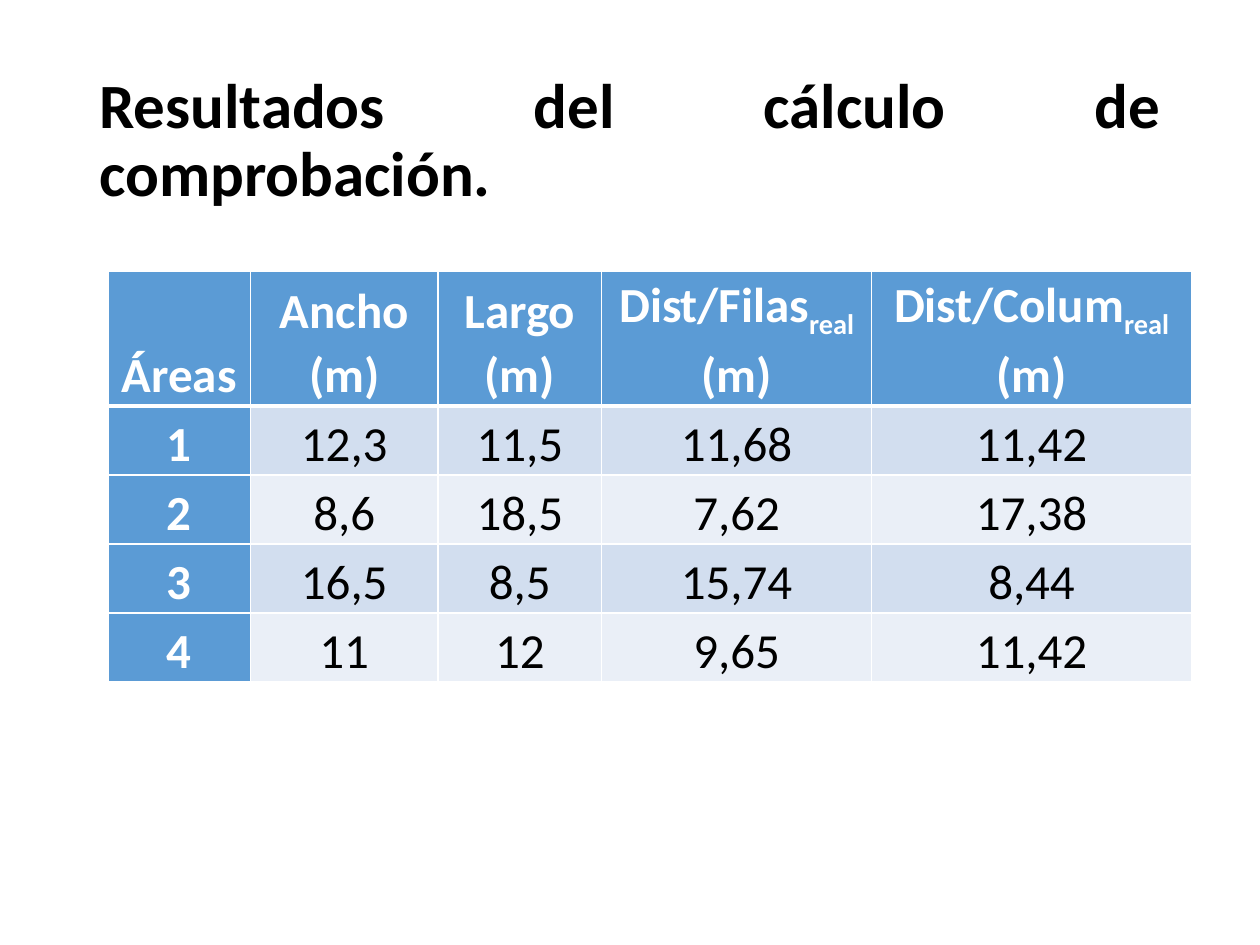
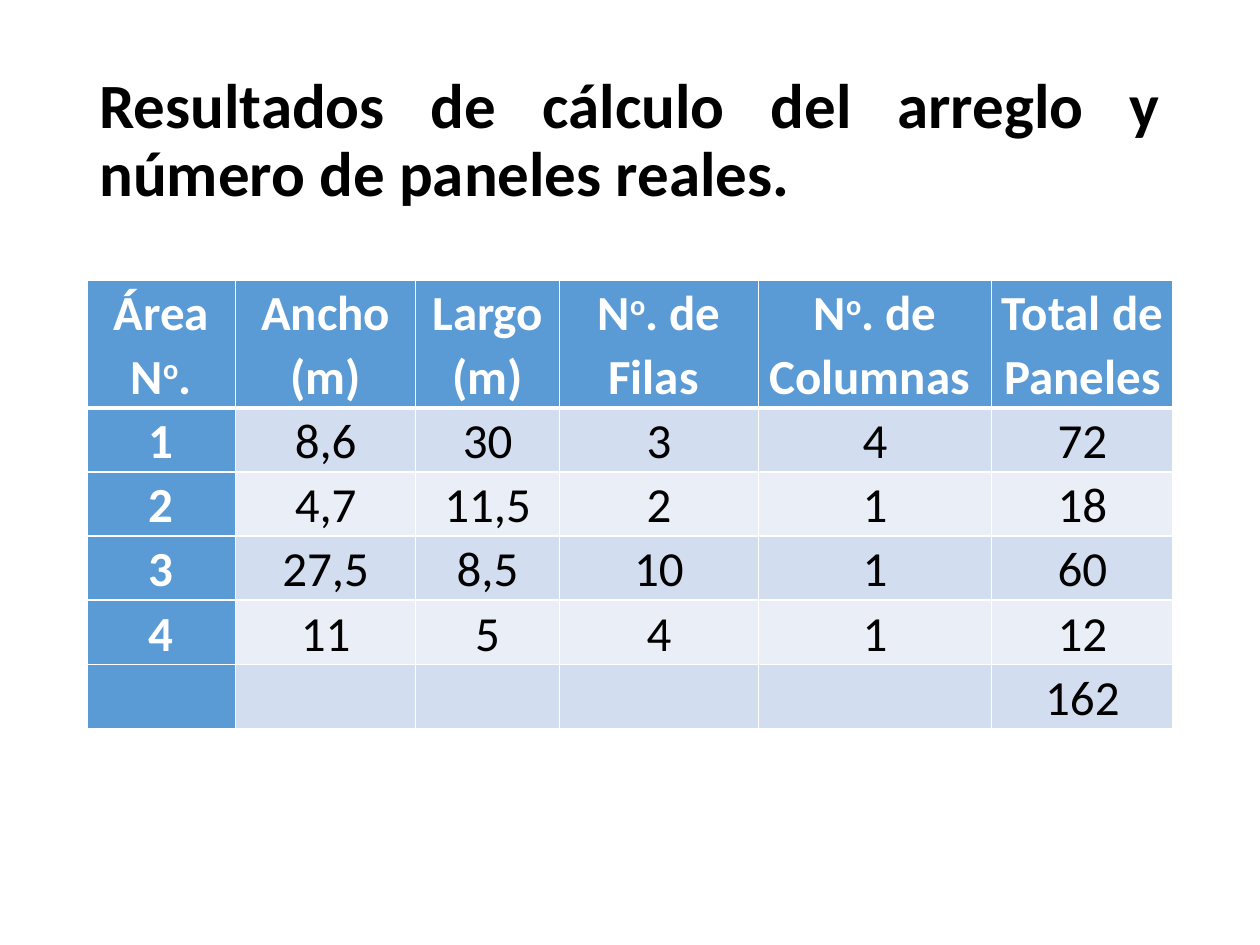
from lxml.etree import SubElement
from pptx import Presentation
from pptx.dml.color import RGBColor
from pptx.enum.text import MSO_ANCHOR as Anchor, MSO_AUTO_SIZE as AutoSize, PP_ALIGN as Align
from pptx.oxml.ns import qn
from pptx.util import Cm, Pt

COLORS = {"text": "000000", "light": "FFFFFF", "head": "5B9BD5",
          "odd": "D2DEEF", "even": "EAEFF7"}
FONT = "Calibri"
TITLE_BOX = (1.75, 1.02, 21.9, 3.68)
SUB, SUPER = -25, 30

CHECK = {
    "title": "Resultados del cálculo de comprobación.",
    "corner": (2.18, 5.46),
    "widths": (2.87, 3.78, 3.3, 5.44, 6.45),
    "heights": (2.72, 1.39),
    "header": ["Áreas", "Ancho (m)", "Largo (m)",
               [("Dist/Filas", 0), ("real", SUB), (" (m)", 0)],
               [("Dist/Colum", 0), ("real", SUB), (" (m)", 0)]],
    "rows": [["1", "12,3", "11,5", "11,68", "11,42"],
             ["2", "8,6", "18,5", "7,62", "17,38"],
             ["3", "16,5", "8,5", "15,74", "8,44"],
             ["4", "11", "12", "9,65", "11,42"]],
}
PANELS = {
    "title": "Resultados de cálculo del arreglo y número de paneles reales.",
    "corner": (1.75, 5.64),
    "widths": (3.0, 3.63, 2.9, 4.01, 4.7, 3.66),
    "heights": (2.58, 1.29),
    "header": [[("Área N", 0), ("o", SUPER), (".", 0)], "Ancho (m)", "Largo (m)",
               [("N", 0), ("o", SUPER), (". de Filas ", 0)],
               [("N", 0), ("o", SUPER), (". de Columnas ", 0)], "Total de Paneles"],
    "rows": [["1", "8,6", "30", "3", "4", "72"],
             ["2", "4,7", "11,5", "2", "1", "18"],
             ["3", "27,5", "8,5", "10", "1", "60"],
             ["4", "11", "5", "4", "1", "12"],
             ["", "", "", "", "", "162"]],
}


def rgb(name):
    """Return a palette colour."""
    return RGBColor.from_string(COLORS[name])


def add_run(para, text, size, color, bold, baseline=0):
    """Append one formatted run, raised or lowered by a baseline percentage."""
    span = para.add_run()
    span.text = text
    span.font.name, span.font.size, span.font.bold = FONT, Pt(size), bold
    span.font.color.rgb = rgb(color)
    if baseline:
        span.font._element.set("baseline", str(baseline * 1000))


def add_title(page, text, box):
    """Place the bold, justified title in its placeholder."""
    title = page.shapes.title
    title.left, title.top, title.width, title.height = map(Cm, box)
    frame = title.text_frame
    frame.word_wrap, frame.auto_size = True, AutoSize.NONE
    frame.vertical_anchor = Anchor.MIDDLE
    para = frame.paragraphs[0]
    para.alignment, para.line_spacing = Align.JUSTIFY, 0.9
    add_run(para, text, 36, "text", True)


def add_borders(cell, top, bottom):
    """Draw white cell borders, with the given top and bottom widths in points."""
    props = cell._tc.get_or_add_tcPr()
    for side, width in (("L", 1), ("R", 1), ("T", top), ("B", bottom)):
        line = SubElement(props, qn(f"a:ln{side}"), w=str(Pt(width)))
        fill = SubElement(line, qn("a:solidFill"))
        SubElement(fill, qn("a:srgbClr"), val=COLORS["light"])


def fill_cell(cell, content, row, column):
    """Format one cell by its place in the table and write its content."""
    heading = row == 0 or column == 0
    add_borders(cell, 3 if row == 1 else 1, 3 if row == 0 else 1)
    cell.fill.solid()
    cell.fill.fore_color.rgb = rgb("head" if heading else "odd" if row % 2 else "even")
    cell.vertical_anchor = Anchor.BOTTOM
    cell.margin_left = cell.margin_right = Cm(0.13)
    cell.margin_top = cell.margin_bottom = 0
    para = cell.text_frame.paragraphs[0]
    para.alignment, para.line_spacing = Align.CENTER, 1.07
    parts = [(content, 0)] if isinstance(content, str) else content
    for text, baseline in parts:
        if text:
            add_run(para, text, 28, "light" if heading else "text", heading, baseline)


def add_results(page, corner, widths, heights, rows):
    """Add the results table with its top left at the given corner."""
    head_height, row_height = heights
    total = head_height + row_height * (len(rows) - 1)
    table = page.shapes.add_table(len(rows), len(widths), *map(Cm, corner),
                                  Cm(sum(widths)), Cm(total)).table
    table.first_col = True
    for column, width in zip(table.columns, widths):
        column.width = Cm(width)
    for index, values in enumerate(rows):
        table.rows[index].height = Cm(row_height if index else head_height)
        for column, content in enumerate(values):
            fill_cell(table.cell(index, column), content, index, column)


def add_results_page(deck, data):
    """Add a slide with a title above a results table."""
    page = deck.slides.add_slide(deck.slide_layouts.get_by_name("Title Only"))
    add_title(page, data["title"], TITLE_BOX)
    add_results(page, data["corner"], data["widths"], data["heights"],
                [data["header"], *data["rows"]])


def main():
    """Build and save the deck."""
    deck = Presentation()
    deck.slide_width, deck.slide_height = Cm(25.4), Cm(19.05)
    for data in (CHECK, PANELS):
        add_results_page(deck, data)
    deck.save("out.pptx")


if __name__ == "__main__":
    main()
